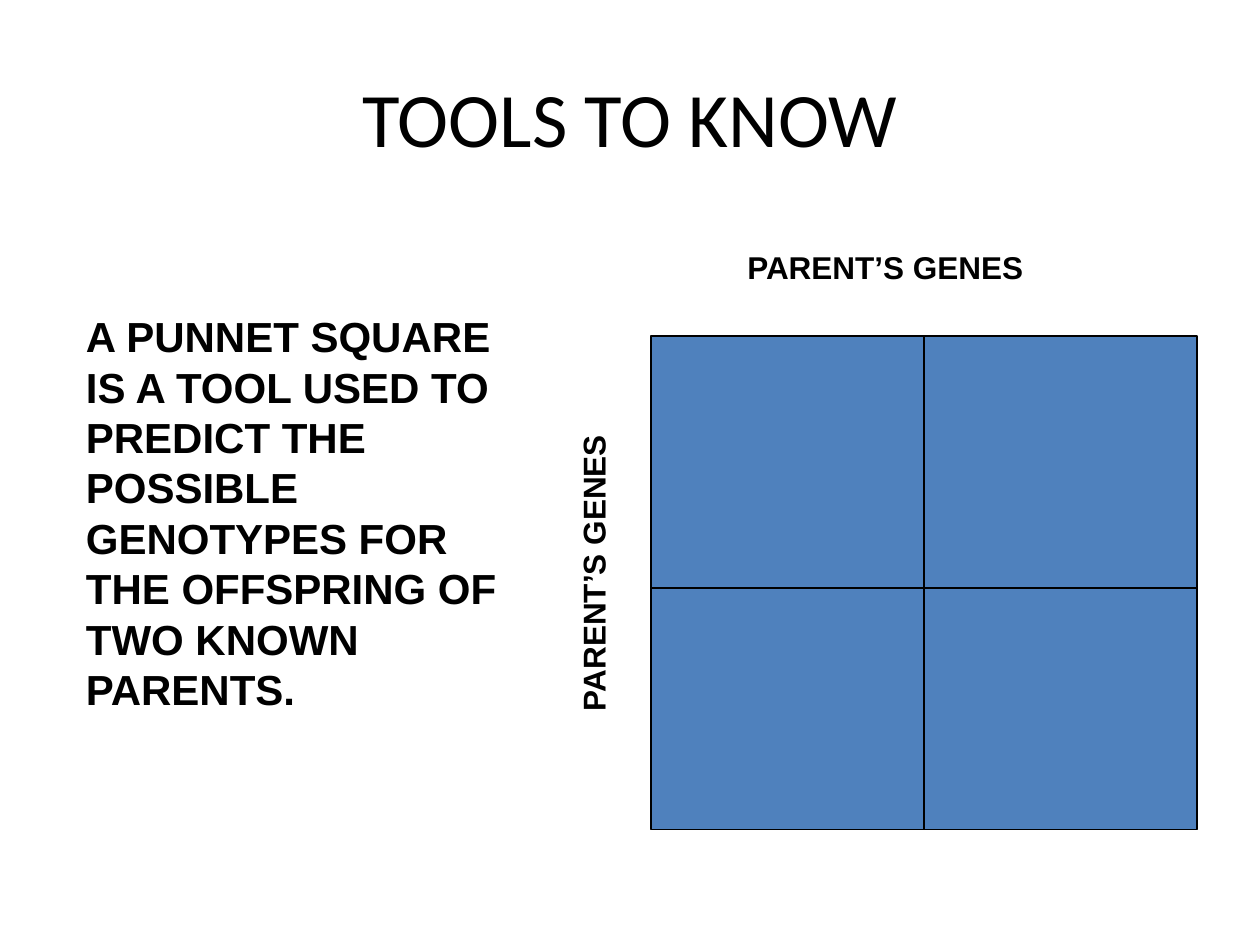
import pptx
import pptx.dml.color
import pptx.enum.shapes
import pptx.enum.text
import pptx.util
from lxml import etree

COLORS = {"text": "000000", "line": "000000", "square": "4F81BD"}
DRAWING_NAMESPACE = "http://schemas.openxmlformats.org/drawingml/2006/main"

presentation = pptx.Presentation()
presentation.slide_width = pptx.util.Inches(10)
presentation.slide_height = pptx.util.Inches(7.5)
# The slide is laid out on 60 columns and 45 rows.
column = presentation.slide_width / 60
row = presentation.slide_height / 45
slide = presentation.slides.add_slide(presentation.slide_layouts[5])


def place(columns, rows):
    """Turn grid columns and rows into whole lengths."""
    return round(columns * column), round(rows * row)


def format_text(shape, text, size, font_name, bold):
    shape.text_frame.text = text
    font = shape.text_frame.paragraphs[0].font
    font.name = font_name
    font.size = pptx.util.Pt(size)
    font.bold = bold
    font.color.rgb = pptx.dml.color.RGBColor.from_string(COLORS["text"])


title = slide.shapes.title
title.left, title.top = place(3, 1.8)
title.width, title.height = place(54, 7.5)
format_text(title, "TOOLS TO KNOW", 44, "Calibri", False)
title.text_frame.vertical_anchor = pptx.enum.text.MSO_ANCHOR.MIDDLE
title.text_frame.paragraphs[0].alignment = pptx.enum.text.PP_ALIGN.CENTER

# Punnett square with its two dividing lines
left, top, right, bottom = 31, 16, 57, 39.5
middle_column, middle_row = 44, 28
square = slide.shapes.add_shape(
    pptx.enum.shapes.MSO_SHAPE.RECTANGLE,
    *place(left, top), *place(right - left, bottom - top))
square.shadow.inherit = False
square.fill.solid()
square.fill.fore_color.rgb = pptx.dml.color.RGBColor.from_string(COLORS["square"])
outlined = [square]

for start, end in [
    ((middle_column, top), (middle_column, bottom)),
    ((left, middle_row), (right, middle_row)),
]:
    divider = slide.shapes.add_connector(
        pptx.enum.shapes.MSO_CONNECTOR.STRAIGHT, *place(*start), *place(*end))
    etree.SubElement(divider.line._get_or_add_ln().getparent(),
                     f"{{{DRAWING_NAMESPACE}}}effectLst")
    outlined.append(divider)

for shape in outlined:
    shape.line.width = pptx.util.Pt(0.75)
    shape.line.color.rgb = pptx.dml.color.RGBColor.from_string(COLORS["line"])

definition = ("A PUNNET SQUARE IS A TOOL USED TO PREDICT THE POSSIBLE GENOTYPES "
              "FOR THE OFFSPRING OF TWO KNOWN PARENTS.")
gene_label = "PARENT’S GENES"
for text, position, extent, size, wrap, rotation in [
    (definition, (3.5, 14.5), (22.6, 19.8), 24, True, 0),
    (gene_label, (35, 11.5), (14.5, 2.4), 18, False, 0),
    (gene_label, (21, 26), (14.5, 2.4), 18, False, 270),
]:
    text_box = slide.shapes.add_textbox(*place(*position), *place(*extent))
    format_text(text_box, text, size, "Arial", True)
    text_box.text_frame.word_wrap = wrap
    text_box.text_frame.auto_size = pptx.enum.text.MSO_AUTO_SIZE.SHAPE_TO_FIT_TEXT
    text_box.rotation = rotation

presentation.save("out.pptx")
